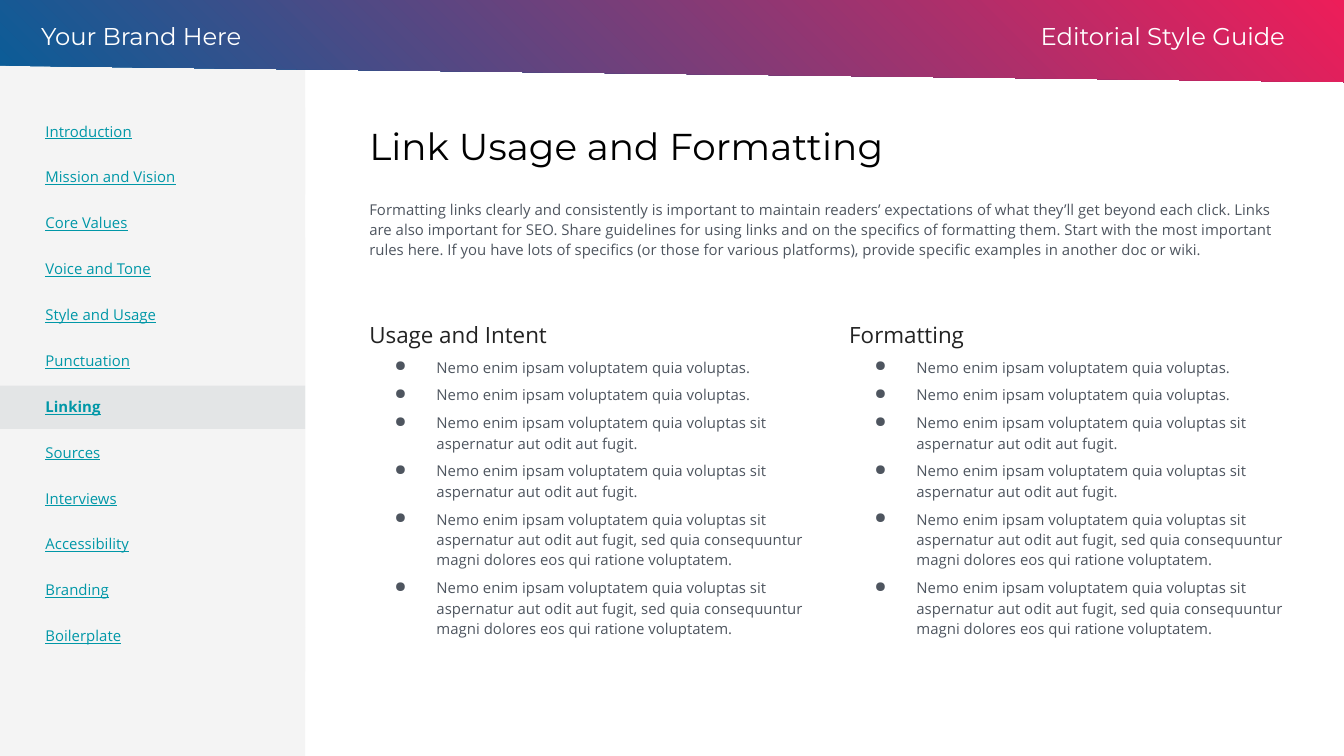
from lxml import etree
from pptx import Presentation
from pptx.dml.color import RGBColor
from pptx.enum import shapes, text
from pptx.oxml import ns
from pptx.util import Cm, Pt

COLORS = {
    "sidebar": "F4F4F4", "active": "E3E5E6", "blue": "095D98", "red": "ED1D59",
    "white": "FFFFFF", "title": "000000", "heading": "222222",
    "body": "4E555F", "link": "0097A7",
}
HEAD_FONT, BODY_FONT = "Montserrat", "Open Sans"
INSET = 0.25
SIDE_LEFT, SIDE_WIDTH = -0.15, 5.92
ROW_TOP, ROW_HEIGHT = 2.03, 0.82
ROW_COUNT, OPEN_ROW = 13, 2
MAIN_LEFT, MAIN_WIDTH = 6.98, 17.22
COLUMN_LEFTS = {"Usage and Intent": MAIN_LEFT, "Formatting": 16.05}

SECTIONS = [
    "Introduction", "Mission and Vision", "Core Values", "Voice and Tone",
    "Style and Usage", "Punctuation", "Linking", "Sources", "Interviews",
    "Accessibility", "Branding", "Boilerplate",
]
CURRENT = "Linking"
INTRO = (
    "Formatting links clearly and consistently is important to maintain readers’ "
    "expectations of what they’ll get beyond each click. Links are also important "
    "for SEO. Share guidelines for using links and on the specifics of formatting "
    "them. Start with the most important rules here. If you have lots of specifics "
    "(or those for various platforms), provide specific examples in another doc or wiki."
)
SHORT = "Nemo enim ipsam voluptatem quia voluptas"
MEDIUM = SHORT + " sit aspernatur aut odit aut fugit"
LONG = MEDIUM + ", sed quia consequuntur magni dolores eos qui ratione voluptatem"
RULES = [rule + "." for rule in (SHORT, MEDIUM, LONG) for _ in range(2)]


def rgb(name):
    return RGBColor.from_string(COLORS[name])


def place(shape, left, top, width, height):
    shape.left, shape.top = Cm(left), Cm(top)
    shape.width, shape.height = Cm(width), Cm(height)


def add_block(slide, left, top, width, height, color,
              preset=shapes.MSO_SHAPE.RECTANGLE):
    block = slide.shapes.add_shape(preset, Cm(left), Cm(top), Cm(width), Cm(height))
    block.shadow.inherit = False
    block.fill.solid()
    block.fill.fore_color.rgb = rgb(color)
    block.line.fill.background()
    return block


def add_header(slide):
    """Gradient band whose lower edge slopes down to the right."""
    band = add_block(slide, -0.05, 0, 25.45, 1.55, "blue",
                     shapes.MSO_SHAPE.FLOWCHART_MANUAL_INPUT)
    band.rotation = 180
    band.element.spPr.find(ns.qn("a:xfrm")).set("flipH", "1")
    band.fill.gradient()
    band.fill.gradient_angle = 315
    for stop, color in zip(band.fill.gradient_stops, ("blue", "red")):
        stop.color.rgb = rgb(color)


def set_frame(frame, insets):
    frame.word_wrap = True
    frame.auto_size = text.MSO_AUTO_SIZE.NONE
    (frame.margin_left, frame.margin_top,
     frame.margin_right, frame.margin_bottom) = [Cm(inset) for inset in insets]


def add_frame(slide, left, top, width, height, insets):
    box = slide.shapes.add_textbox(Cm(left), Cm(top), Cm(width), Cm(height))
    set_frame(box.text_frame, insets)
    return box.text_frame


def write(paragraph, words, size, font, color, spacing=1.0, before=0):
    paragraph.line_spacing = spacing
    paragraph.space_before = Pt(before)
    run = paragraph.add_run()
    run.text = words
    run.font.size = Pt(size)
    run.font.name = font
    run.font.color.rgb = rgb(color)
    return run


def set_bullet(paragraph):
    props = paragraph._p.get_or_add_pPr()
    props.set("marL", str(Cm(1.27)))
    props.set("indent", str(Cm(-0.79)))
    color = etree.SubElement(props, ns.qn("a:buClr"))
    etree.SubElement(color, ns.qn("a:srgbClr")).set("val", COLORS["body"])
    etree.SubElement(props, ns.qn("a:buChar")).set("char", "●")


def add_header_label(slide, left, words, align):
    frame = add_frame(slide, left, 0.15, 8.43, 1.09, [INSET] * 4)
    label = frame.paragraphs[0]
    label.alignment = align
    write(label, words, 13, HEAD_FONT, "white")


def add_title(slide, words):
    title = slide.shapes.title
    place(title, MAIN_LEFT, 2.26, MAIN_WIDTH, 1.09)
    frame = title.text_frame
    set_frame(frame, [0] * 4)
    frame.vertical_anchor = text.MSO_ANCHOR.MIDDLE
    frame.paragraphs[0].alignment = text.PP_ALIGN.LEFT
    write(frame.paragraphs[0], words, 20, HEAD_FONT, "title", 0.9)


def add_navigation(slide):
    for row in range(ROW_COUNT):
        if row != OPEN_ROW:
            add_block(slide, SIDE_LEFT, ROW_TOP + row * ROW_HEIGHT,
                      SIDE_WIDTH, ROW_HEIGHT, "sidebar")
    add_block(slide, SIDE_LEFT, 7.29, SIDE_WIDTH, ROW_HEIGHT, "active")
    frame = add_frame(slide, 0.86, 2.06, 3.96, 10.97, (0, INSET, 0, 0))
    for index, section in enumerate(SECTIONS):
        entry = frame.add_paragraph() if index else frame.paragraphs[0]
        run = write(entry, section, 8, BODY_FONT, "link", before=15 if index else 0)
        run.font.underline = True
        run.font.bold = section == CURRENT


def add_rule_column(slide, heading, left):
    frame = add_frame(slide, left, 5.77, 8.56, 7.54, (0, 0, INSET, INSET))
    write(frame.paragraphs[0], heading, 12, BODY_FONT, "heading", 1.6)
    for rule in RULES:
        item = frame.add_paragraph()
        write(item, rule, 8, BODY_FONT, "body", 1.14, before=4)
        set_bullet(item)


def main():
    deck = Presentation()
    deck.slide_width, deck.slide_height = Cm(25.4), Cm(14.29)
    slide = deck.slides.add_slide(deck.slide_layouts[5])

    add_block(slide, -0.05, -0.03, 5.82, 14.32, "sidebar")
    add_header(slide)
    add_header_label(slide, 16.1, "Editorial Style Guide", text.PP_ALIGN.RIGHT)
    add_header_label(slide, 0.53, "Your Brand Here", text.PP_ALIGN.LEFT)
    add_title(slide, "Link Usage and Formatting")
    add_navigation(slide)
    intro = add_frame(slide, MAIN_LEFT, 3.5, MAIN_WIDTH, 1.3, (0, INSET, 0, 0))
    write(intro.paragraphs[0], INTRO, 8, BODY_FONT, "body", 1.13)
    for heading, left in COLUMN_LEFTS.items():
        add_rule_column(slide, heading, left)

    deck.save("out.pptx")


if __name__ == "__main__":
    main()
